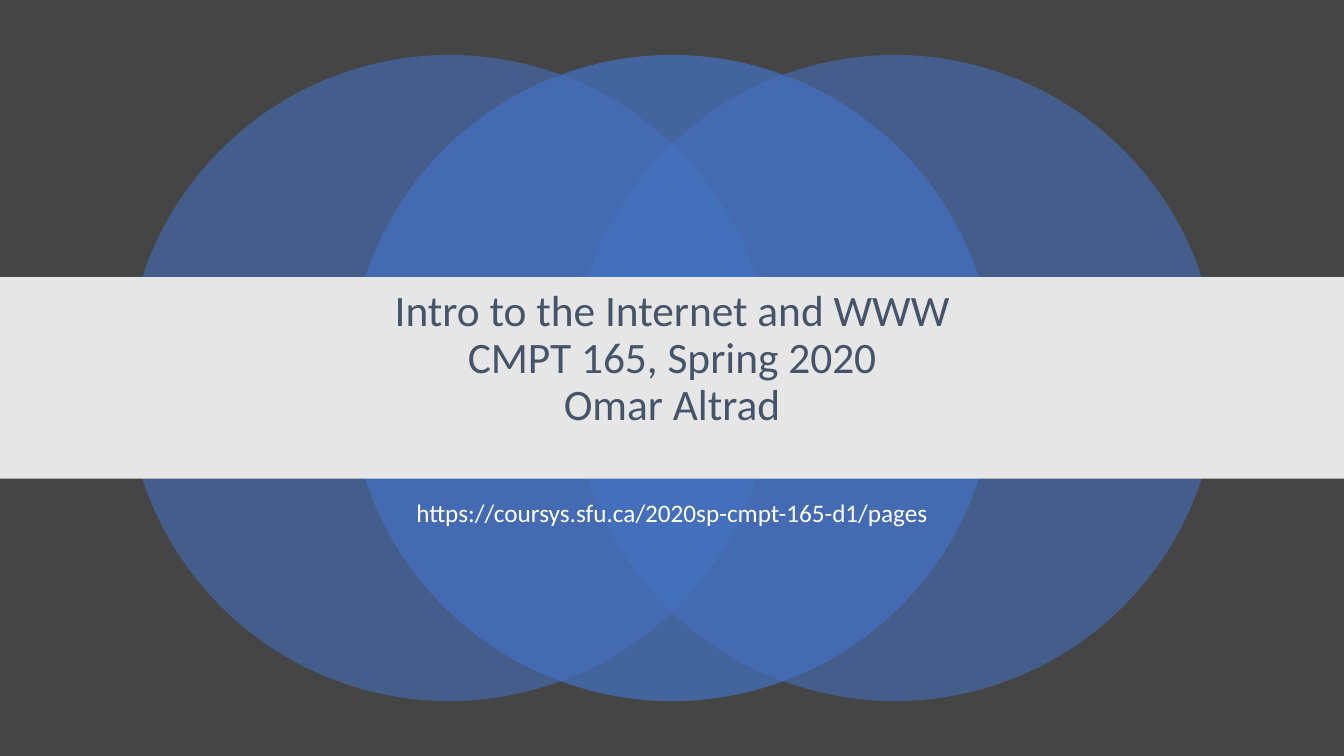
from lxml import etree
from pptx import Presentation
from pptx.dml.color import RGBColor
from pptx.enum.shapes import MSO_SHAPE
from pptx.enum.text import MSO_ANCHOR, PP_ALIGN
from pptx.oxml.ns import qn
from pptx.util import Pt

OVAL, RECTANGLE = MSO_SHAPE.OVAL, MSO_SHAPE.RECTANGLE
TOP, MIDDLE = MSO_ANCHOR.TOP, MSO_ANCHOR.MIDDLE
CENTER = PP_ALIGN.CENTER

CHARCOAL = RGBColor(0x45, 0x45, 0x45)
BLUE = RGBColor(0x44, 0x72, 0xC4)
LIGHT_GRAY = RGBColor(0xE7, 0xE6, 0xE6)
SLATE = RGBColor(0x44, 0x54, 0x6A)
WHITE = RGBColor(0xFF, 0xFF, 0xFF)

PAGE_WIDTH, PAGE_HEIGHT = 960, 540
DIAMETER = 461.5
CIRCLE_STEP = 159.1
TITLE_LINES = ["Intro to the Internet and WWW", "CMPT 165, Spring 2020", "Omar Altrad"]
COURSE_ADDRESS = ["https://coursys.sfu.ca/2020sp-cmpt-165-d1/pages"]


class SlideBuilder:
    font_name = "Calibri"
    line_spacing = 0.9

    def __init__(self, page):
        self.page = page

    def background(self, color):
        fill = self.page.background.fill
        fill.solid()
        fill.fore_color.rgb = color

    def shape(self, kind, left, top, width, height, color, opacity=100):
        shape = self.page.shapes.add_shape(kind, Pt(left), Pt(top), Pt(width), Pt(height))
        shape.shadow.inherit = False
        shape.fill.solid()
        shape.fill.fore_color.rgb = color
        shape.line.fill.background()
        if opacity < 100:
            color_element = shape._element.spPr.find(qn("a:solidFill"))[0]
            etree.SubElement(color_element, qn("a:alpha"), val=str(opacity * 1000))

    def text(self, lines, left, top, width, height, size, color, anchor=TOP, bottom_inset=3.6):
        box = self.page.shapes.add_textbox(Pt(left), Pt(top), Pt(width), Pt(height))
        frame = box.text_frame
        frame_format = {"word_wrap": True, "vertical_anchor": anchor, "margin_bottom": Pt(bottom_inset)}
        for name, value in frame_format.items():
            setattr(frame, name, value)
        for index, line in enumerate(lines):
            para = frame.add_paragraph() if index else frame.paragraphs[0]
            para.alignment = CENTER
            para.line_spacing = self.line_spacing
            span = para.add_run()
            span.text = line
            for name, value in {"name": self.font_name, "size": Pt(size)}.items():
                setattr(span.font, name, value)
            span.font.color.rgb = color


def main():
    deck = Presentation()
    deck.slide_width, deck.slide_height = Pt(PAGE_WIDTH), Pt(PAGE_HEIGHT)
    builder = SlideBuilder(deck.slides.add_slide(deck.slide_layouts[6]))
    builder.background(CHARCOAL)

    middle_left = (PAGE_WIDTH - DIAMETER) / 2
    circle_top = (PAGE_HEIGHT - DIAMETER) / 2
    for offset, opacity in [(-1, 55), (1, 55), (0, 70)]:
        left = middle_left + offset * CIRCLE_STEP
        builder.shape(OVAL, left, circle_top, DIAMETER, DIAMETER, BLUE, opacity)

    builder.shape(RECTANGLE, 0, 198, PAGE_WIDTH, 144, LIGHT_GRAY)
    builder.text(TITLE_LINES, 120, 219, 720, 109, 31, SLATE, MIDDLE, bottom_inset=37.6)
    builder.text(COURSE_ADDRESS, 120, 354.2, 720, 60, 18, WHITE)
    deck.save("out.pptx")


if __name__ == "__main__":
    main()
